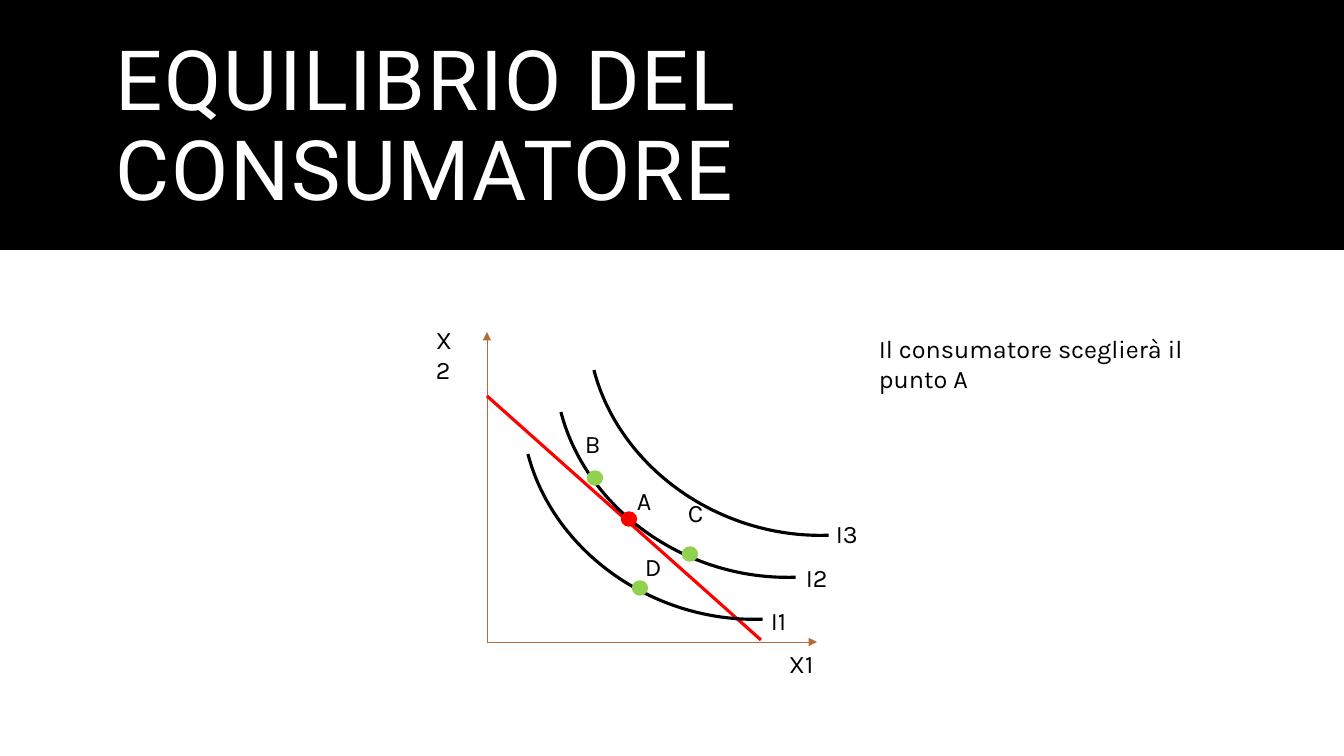
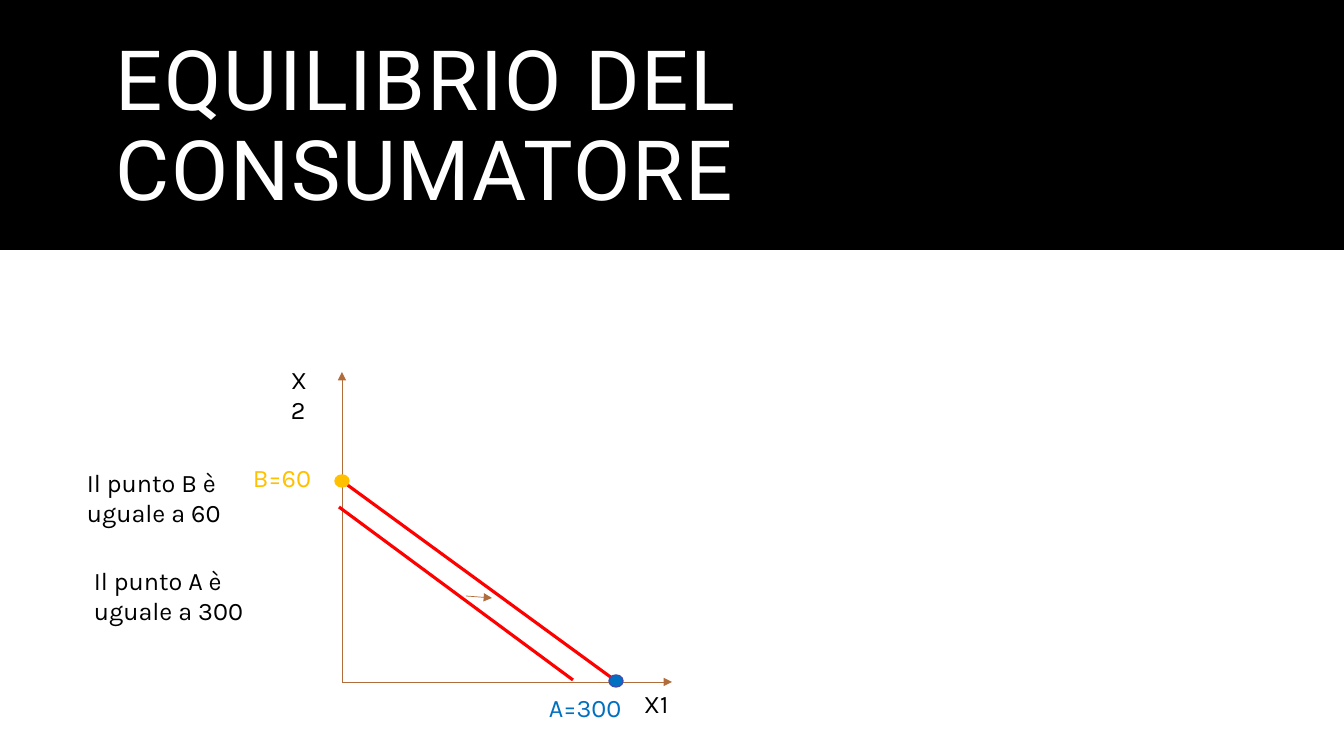
from lxml import etree
from pptx import Presentation
from pptx.dml.color import RGBColor
from pptx.enum.shapes import MSO_CONNECTOR, MSO_SHAPE
from pptx.enum.text import MSO_ANCHOR
from pptx.oxml.ns import qn
from pptx.util import Emu, Pt

EMU_PER_PX = 914400 / 100.8
BLACK, WHITE, RED, GREEN = "000000", "FFFFFF", "FF0000", "92D050"
BROWN, BLUE, INDIGO, GOLD = "B16C3B", "0070C0", "3B4EB1", "FFC000"

TITLE = "EQUILIBRIO DEL CONSUMATORE"
TITLE_FORMAT = {"name": "Roboto", "size": Pt(59.4)}
LABEL_FORMAT = {"name": "Karla", "size": Pt(18)}
TITLE_SPACING = 120  # hundredths of a point
AXIS_WIDTH, CURVE_WIDTH, DOT_LINE_WIDTH = 0.5, 2.25, 1
X_AXIS_LENGTH, Y_AXIS_LENGTH = 330, 310
CURVE_SIZE = (435, 384)
CURVE_ROTATION = 200.5
CURVE_ADJUSTMENTS = (145.13, 198.79)

# lines: from x, from y, to x, to y, colour, width, arrow
# dots: centre x, centre y, fill, outline
# labels: text, left, top, width, height, colour
diagrams = [
    {
        "origin": (487, 642),
        "curves": [(519 + 33 * step, 232 - 42 * step) for step in range(3)],
        "lines": [(487, 396, 761, 640, RED, CURVE_WIDTH, False)],
        "dot_size": (15, 14),
        "dots": [
            (640, 588, GREEN, GREEN),
            (690, 554, GREEN, GREEN),
            (595, 478, GREEN, GREEN),
            (629, 519, RED, RED),
        ],
        "labels": [
            ("I1", 761, 600, 60, 40, BLACK),
            ("I2", 796, 557, 60, 40, BLACK),
            ("I3", 826, 513, 60, 40, BLACK),
            ("B", 575, 423, 40, 40, BLACK),
            ("C", 678, 492, 40, 40, BLACK),
            ("A", 627, 480, 40, 40, BLACK),
            ("D", 635, 546, 40, 40, BLACK),
            ("Il consumatore sceglierà il punto A", 869, 328, 380, 72, BLACK),
        ],
    },
    {
        "origin": (342, 682),
        "curves": [],
        "lines": [
            (342, 481, 616, 681, RED, CURVE_WIDTH, False),
            (339, 507, 573, 680, RED, CURVE_WIDTH, False),
            (466, 596, 492, 598, BROWN, AXIS_WIDTH, True),
        ],
        "dot_size": (14, 12),
        "dots": [(616, 681, BLUE, INDIGO), (342, 481, GOLD, GOLD)],
        "labels": [
            ("A=300", 539, 687, 100, 40, BLUE),
            ("B=60", 243, 457, 90, 40, GOLD),
            ("Il punto B è uguale a 60", 77, 462, 207, 72, BLACK),
            ("Il punto A è uguale a 300", 84, 560, 207, 72, BLACK),
        ],
    },
]


def px(*lengths):
    return [Emu(round(length * EMU_PER_PX)) for length in lengths]


def colour(hex_string):
    return RGBColor.from_string(hex_string)


presentation = Presentation()
presentation.slide_width, presentation.slide_height = px(1344, 756)
blank_layout = presentation.slide_layouts[6]

for diagram in diagrams:
    slide = presentation.slides.add_slide(blank_layout)
    shapes = slide.shapes
    origin_x, origin_y = diagram["origin"]

    band = shapes.add_shape(MSO_SHAPE.RECTANGLE, *px(0, 0, 1344, 250))
    band.shadow.inherit = False
    band.fill.solid()
    band.fill.fore_color.rgb = colour(BLACK)
    band.line.fill.background()

    axes = [
        (origin_x, origin_y, origin_x + X_AXIS_LENGTH, origin_y, BROWN, AXIS_WIDTH, True),
        (origin_x, origin_y, origin_x, origin_y - Y_AXIS_LENGTH, BROWN, AXIS_WIDTH, True),
    ]
    for *ends, line_colour, width, has_arrow in axes + diagram["lines"]:
        connector = shapes.add_connector(MSO_CONNECTOR.STRAIGHT, *px(*ends))
        connector.line.color.rgb = colour(line_colour)
        connector.line.width = Pt(width)
        properties = connector._element.spPr
        if has_arrow:
            etree.SubElement(properties.find(qn("a:ln")), qn("a:tailEnd"), type="triangle")
        etree.SubElement(properties, qn("a:effectLst"))

    for left, top in diagram["curves"]:
        curve = shapes.add_shape(MSO_SHAPE.ARC, *px(left, top, *CURVE_SIZE))
        curve.shadow.inherit = False
        curve.rotation = CURVE_ROTATION
        for index, adjustment in enumerate(CURVE_ADJUSTMENTS):
            curve.adjustments[index] = adjustment
        curve.fill.background()
        curve.line.color.rgb = colour(BLACK)
        curve.line.width = Pt(CURVE_WIDTH)

    dot_width, dot_height = diagram["dot_size"]
    for center_x, center_y, fill_colour, line_colour in diagram["dots"]:
        left, top = center_x - dot_width / 2, center_y - dot_height / 2
        dot = shapes.add_shape(MSO_SHAPE.OVAL, *px(left, top, dot_width, dot_height))
        dot.shadow.inherit = False
        dot.fill.solid()
        dot.fill.fore_color.rgb = colour(fill_colour)
        dot.line.color.rgb = colour(line_colour)
        dot.line.width = Pt(DOT_LINE_WIDTH)

    axis_labels = [
        ("X1", origin_x + 292, origin_y + 1, 60, 40, BLACK),
        ("X2", origin_x - 61, origin_y - 323, 46, 72, BLACK),
    ]
    title = (TITLE, 106, 35, 1132, 187, WHITE)
    for text, *box, text_colour in [title] + axis_labels + diagram["labels"]:
        is_title = text == TITLE
        text_frame = shapes.add_textbox(*px(*box)).text_frame
        text_frame.word_wrap = True
        paragraph = text_frame.paragraphs[0]
        run = paragraph.add_run()
        run.text = text
        for name, value in (TITLE_FORMAT if is_title else LABEL_FORMAT).items():
            setattr(run.font, name, value)
        run.font.color.rgb = colour(text_colour)
        if is_title:
            text_frame.vertical_anchor = MSO_ANCHOR.MIDDLE
            paragraph.line_spacing = 0.9
            run._r.get_or_add_rPr().set("spc", str(TITLE_SPACING))

presentation.save("out.pptx")
